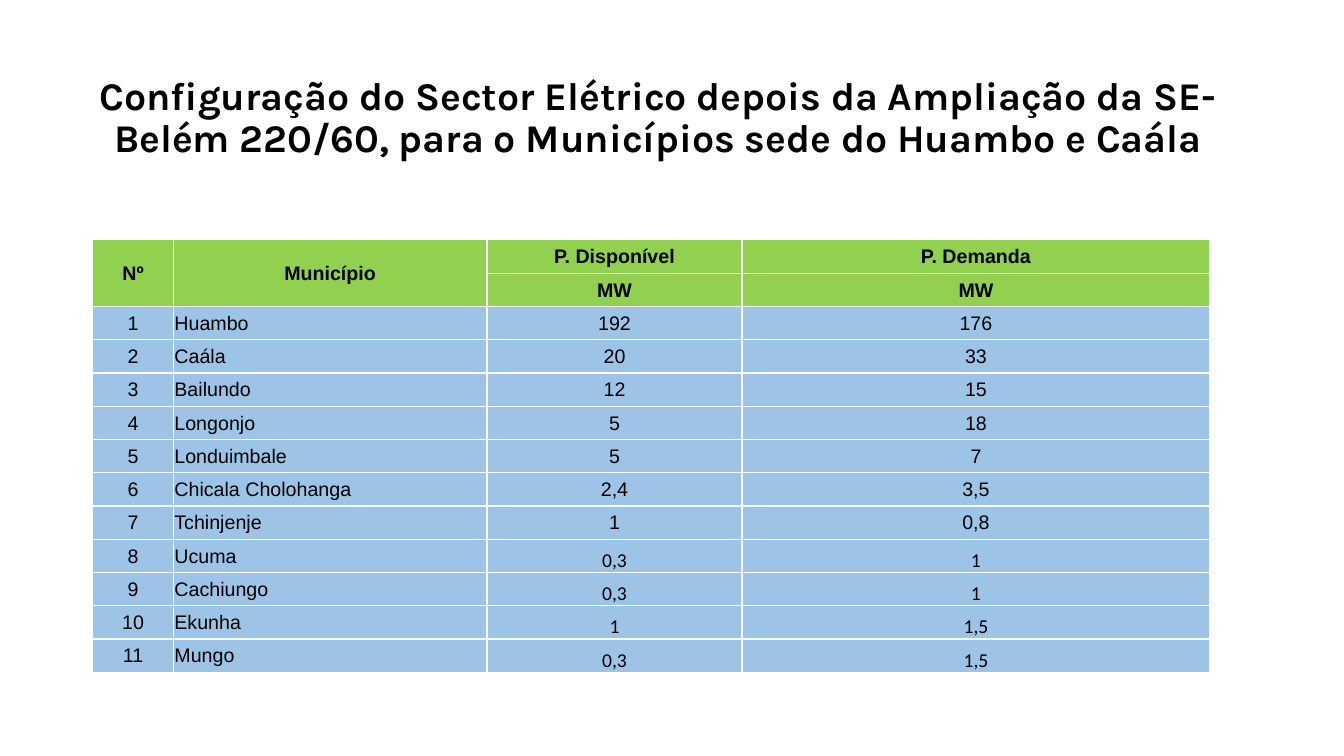
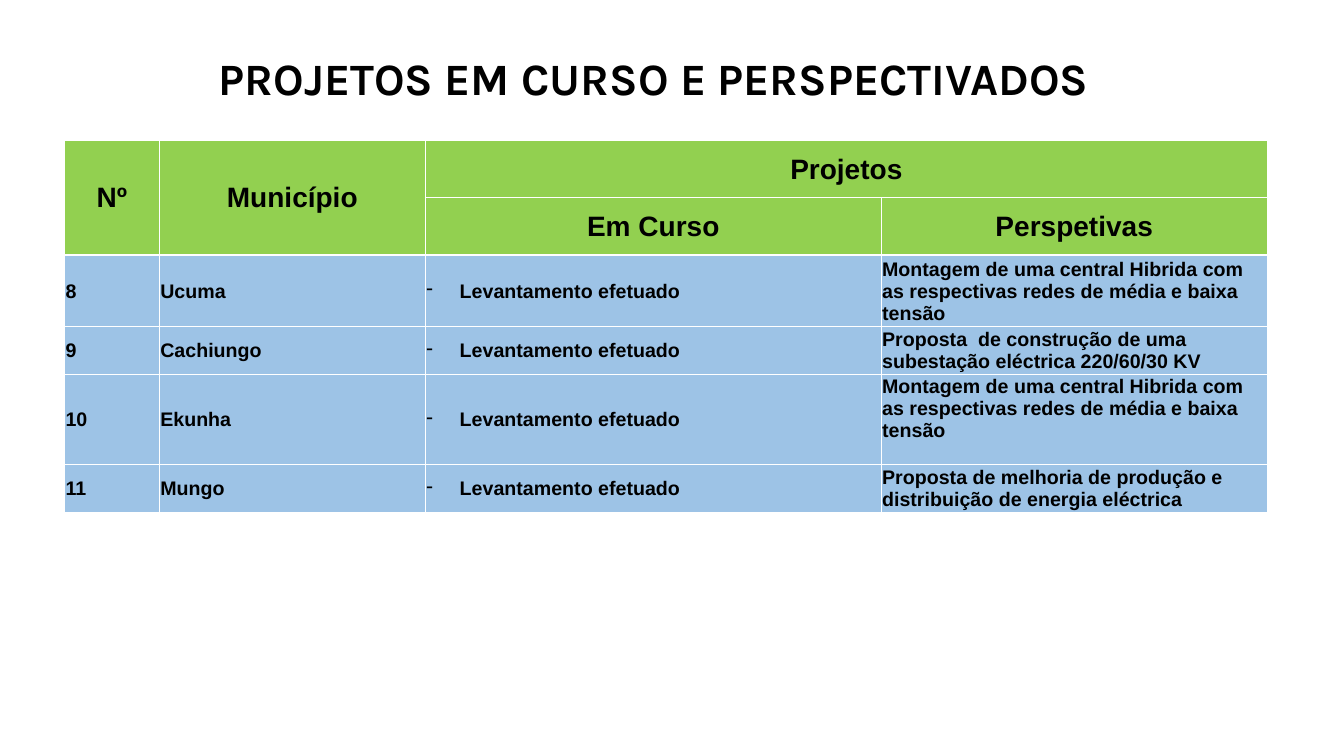
from lxml import etree
from pptx import Presentation
from pptx.dml.color import RGBColor
from pptx.enum.text import MSO_ANCHOR, PP_ALIGN
from pptx.oxml.ns import qn
from pptx.util import Pt

PX = 9144
CENTER, LEFT = PP_ALIGN.CENTER, PP_ALIGN.LEFT
TOP, MIDDLE, BOTTOM = MSO_ANCHOR.TOP, MSO_ANCHOR.MIDDLE, MSO_ANCHOR.BOTTOM
BLACK, WHITE, GREEN, BLUE = "000000", "FFFFFF", "92D050", "9DC3E6"
TITLE_FONT, TABLE_FONT, FIGURE_FONT = "Karla", "Arial", "Calibri"
HEADER_ROWS = 2
BODY_SIZE = 14

POWER_ROWS = [
    ("Nº", "Município", "P. Disponível", "P. Demanda"),
    ("", "", "MW", "MW"),
    ("1", "Huambo", "192", "176"),
    ("2", "Caála", "20", "33"),
    ("3", "Bailundo", "12", "15"),
    ("4", "Longonjo", "5", "18"),
    ("5", "Londuimbale", "5", "7"),
    ("6", "Chicala Cholohanga", "2,4", "3,5"),
    ("7", "Tchinjenje", "1", "0,8"),
    ("8", "Ucuma", "0,3", "1"),
    ("9", "Cachiungo", "0,3", "1"),
    ("10", "Ekunha", "1", "1,5"),
    ("11", "Mungo", "0,3", "1,5"),
]
SURVEY = "Levantamento efetuado"
HYBRID = "Montagem de uma central Hibrida com as respectivas redes de média e baixa tensão"
PROJECT_ROWS = [
    ("Nº", "Município", "Projetos", ""),
    ("", "", "Em Curso", "Perspetivas"),
    ("8", "Ucuma", SURVEY, HYBRID),
    ("9", "Cachiungo", SURVEY, "Proposta  de construção de uma subestação eléctrica 220/60/30 KV"),
    ("10", "Ekunha", SURVEY, HYBRID),
    ("11", "Mungo", SURVEY, "Proposta de melhoria de produção e distribuição de energia eléctrica"),
]


def color(value):
    return RGBColor.from_string(value)


class Deck:
    """Holds the shared style and the slide being built."""

    def __init__(self, width, height):
        self.presentation = Presentation()
        self.presentation.slide_width = width * PX
        self.presentation.slide_height = height * PX
        self.slide = None

    def add_slide(self):
        self.slide = self.presentation.slides.add_slide(self.presentation.slide_layouts[6])

    def format_text(self, paragraph, font, size, bold, align):
        paragraph.alignment = align
        for run in paragraph.runs:
            run.font.name = font
            run.font.size = Pt(size)
            run.font.bold = bold
            run.font.color.rgb = color(BLACK)

    def title(self, text, left, top, width, height, size):
        shape = self.slide.shapes.add_textbox(left * PX, top * PX, width * PX, height * PX)
        text_frame = shape.text_frame
        text_frame.word_wrap = True
        text_frame.vertical_anchor = MIDDLE
        text_frame.text = text
        paragraph = text_frame.paragraphs[0]
        paragraph.line_spacing = 0.9
        self.format_text(paragraph, TITLE_FONT, size, True, CENTER)

    def borders(self, cell):
        properties = cell._tc.get_or_add_tcPr()
        for side in ("a:lnL", "a:lnR", "a:lnT", "a:lnB"):
            line = etree.SubElement(properties, qn(side), w=str(Pt(1)))
            fill = etree.SubElement(line, qn("a:solidFill"))
            etree.SubElement(fill, qn("a:srgbClr"), val=WHITE)

    def cell(self, cell, text, fill, size, bold, align):
        cell.margin_left = cell.margin_right = cell.margin_top = PX
        cell.margin_bottom = 0
        cell.vertical_anchor = MIDDLE
        self.borders(cell)
        cell.fill.solid()
        cell.fill.fore_color.rgb = color(fill)
        cell.text_frame.text = text
        self.format_text(cell.text_frame.paragraphs[0], TABLE_FONT, size, bold, align)

    def dash(self, cell, indent):
        properties = cell.text_frame.paragraphs[0]._p.get_or_add_pPr()
        properties.set("marL", str(indent * PX))
        properties.set("indent", str(-indent * PX))
        etree.SubElement(properties, qn("a:buChar"), char="-")

    def table(self, rows, left, top, widths, heights, header_size, body_bold, centered, merges):
        frame = self.slide.shapes.add_table(
            len(rows), len(widths), left * PX, top * PX, sum(widths) * PX, sum(heights) * PX)
        table = frame.table
        table.horz_banding = False
        for column, width in zip(table.columns, widths):
            column.width = width * PX
        for row, height in zip(table.rows, heights):
            row.height = height * PX
        for row_index, texts in enumerate(rows):
            for column_index, text in enumerate(texts):
                cell = table.cell(row_index, column_index)
                if row_index < HEADER_ROWS:
                    self.cell(cell, text, GREEN, header_size, True, CENTER)
                else:
                    align = CENTER if column_index in centered else LEFT
                    self.cell(cell, text, BLUE, BODY_SIZE, body_bold, align)
        for first, last in merges:
            table.cell(*first).merge(table.cell(*last))
        return table


def power_slide(deck):
    deck.add_slide()
    deck.title("Configuração do Sector Elétrico depois da Ampliação da SE-Belém 220/60, "
               "para o Municípios sede do Huambo e Caála", 46, 45, 1213, 145, 28)
    table = deck.table(POWER_ROWS, 92, 238, (80, 311, 253, 464), [33] * len(POWER_ROWS),
                       14, False, (0, 2, 3), [((0, 0), (1, 0)), ((0, 1), (1, 1))])
    for row_index in range(9, len(POWER_ROWS)):
        for column_index in (2, 3):
            cell = table.cell(row_index, column_index)
            cell.vertical_anchor = BOTTOM
            deck.format_text(cell.text_frame.paragraphs[0], FIGURE_FONT, BODY_SIZE, False, CENTER)


def projects_slide(deck):
    deck.add_slide()
    deck.title("PROJETOS EM CURSO E PERSPECTIVADOS", 74, 41, 1150, 79, 32)
    table = deck.table(PROJECT_ROWS, 64, 139, (94, 264, 452, 383), (57, 57, 67, 45, 89, 45),
                       20, True, (), [((0, 0), (1, 0)), ((0, 1), (1, 1)), ((0, 2), (0, 3))])
    for row_index in range(HEADER_ROWS, len(PROJECT_ROWS)):
        deck.dash(table.cell(row_index, 2), 33)
    table.cell(4, 3).vertical_anchor = TOP


def main():
    deck = Deck(1333, 750)
    power_slide(deck)
    projects_slide(deck)
    deck.presentation.save("out.pptx")


if __name__ == "__main__":
    main()
